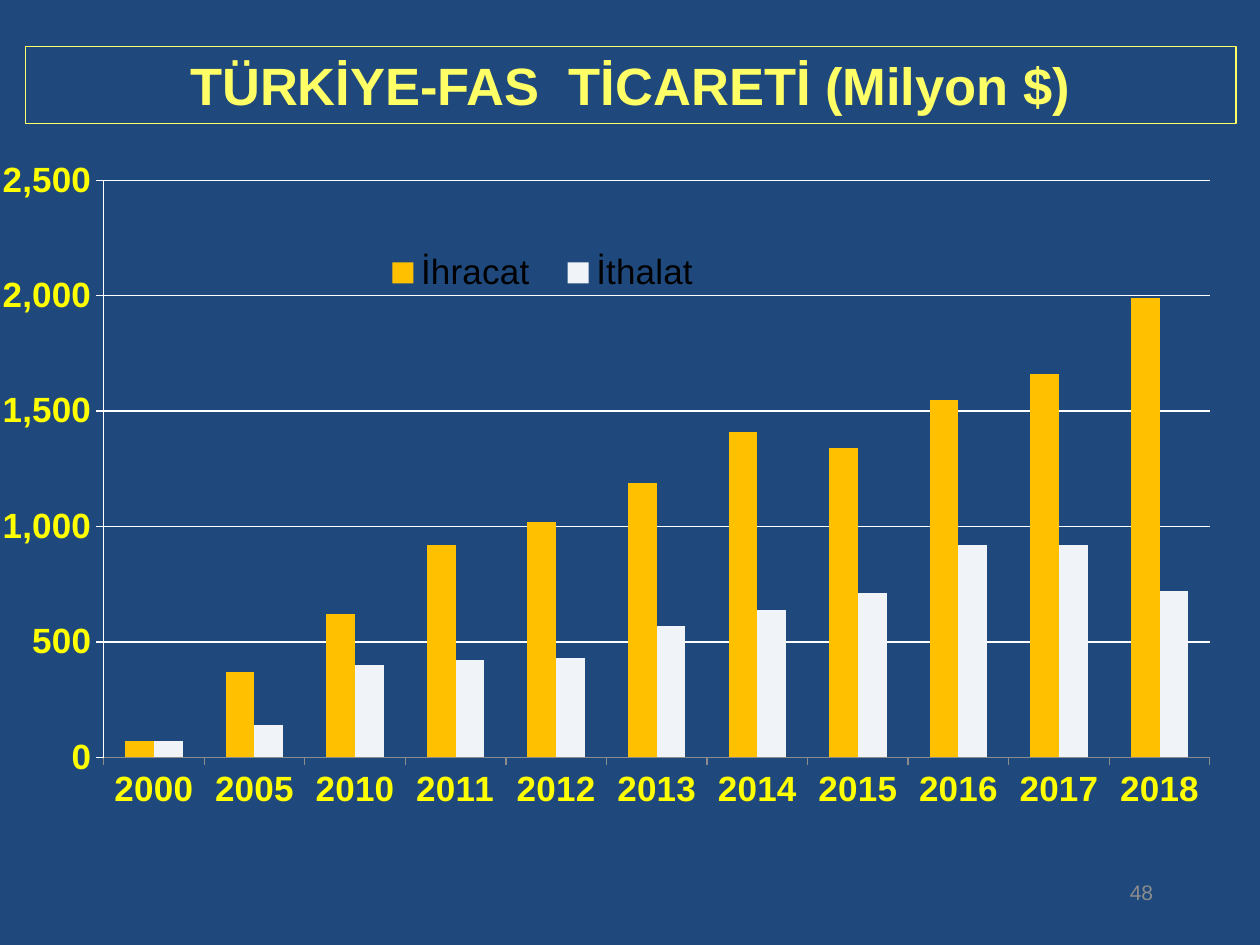
from lxml import etree
from pptx import Presentation
from pptx import util as u
from pptx.chart.data import CategoryChartData
from pptx.dml.color import RGBColor
from pptx.enum import chart as charts, shapes, text
from pptx.oxml.ns import qn

COLORS = {
    "background": "1F497D",
    "title": "FFFF66",
    "axis": "FFFF00",
    "grid": "FFFFFF",
    "axis_line": "8C8C8C",
    "legend": "000000",
    "number": "8C8C8C",
    "exports": "FFC000",
    "imports": "F0F3F8",
}
YEARS = ["2000", *map(str, range(2005, 2011, 5)), *map(str, range(2011, 2019))]
TRADE = {
    "İhracat": ("exports", [70, 370, 620, 920, 1020, 1190, 1410, 1340, 1550, 1660, 1990]),
    "İthalat": ("imports", [70, 140, 400, 420, 430, 570, 640, 710, 920, 920, 720]),
}


def color(name):
    return RGBColor.from_string(COLORS[name])


def set_font(font, size, tint, bold=False):
    font.name = "Arial"
    font.size = u.Pt(size)
    font.bold = bold
    font.color.rgb = color(tint)


def write(frame, wording, *, size, tint, bold=False, align, anchor):
    frame.word_wrap = True
    frame.vertical_anchor = anchor
    paragraph = frame.paragraphs[0]
    paragraph.alignment = align
    run = paragraph.add_run()
    run.text = wording
    set_font(run.font, size, tint, bold)


def set_line(line, tint):
    line.color.rgb = color(tint)
    line.width = u.Pt(0.75)


def place(parent, after, box, inner=False):
    for old in parent.findall(qn("c:layout")):
        parent.remove(old)
    layout = etree.Element(qn("c:layout"))
    manual = etree.SubElement(layout, qn("c:manualLayout"))
    settings = [("layoutTarget", "inner")] if inner else []
    settings += [("xMode", "edge"), ("yMode", "edge"), *zip("xywh", box)]
    for tag, value in settings:
        etree.SubElement(manual, qn(f"c:{tag}")).set("val", str(value))
    parent.insert(0 if after is None else parent.index(after) + 1, layout)


class TradeSlide:
    """Holds the style and the current slide, and adds its elements."""

    def __init__(self, deck):
        self.slide = deck.slides.add_slide(deck.slide_layouts[6])
        fill = self.slide.background.fill
        fill.solid()
        fill.fore_color.rgb = color("background")

    def title(self, wording, box):
        banner = self.slide.shapes.add_shape(
            shapes.MSO_SHAPE.RECTANGLE, *map(u.Inches, box))
        banner.shadow.inherit = False
        banner.fill.background()
        set_line(banner.line, "title")
        write(banner.text_frame, wording, size=30, tint="title", bold=True,
              align=text.PP_ALIGN.CENTER, anchor=text.MSO_ANCHOR.TOP)

    def page_number(self, wording, box):
        number = self.slide.shapes.add_textbox(*map(u.Inches, box))
        write(number.text_frame, wording, size=12, tint="number",
              align=text.PP_ALIGN.RIGHT, anchor=text.MSO_ANCHOR.MIDDLE)

    def column_chart(self, years, trade, box):
        data = CategoryChartData(number_format="#,##0")
        data.categories = years
        for name, (_, values) in trade.items():
            data.add_series(name, values)
        chart = self.slide.shapes.add_chart(
            charts.XL_CHART_TYPE.COLUMN_CLUSTERED, *map(u.Inches, box), data).chart
        chart.has_title = False
        set_font(chart.font, 18, "legend")

        columns = chart.plots[0]
        columns.gap_width = 150
        columns.overlap = 0
        columns.vary_by_categories = False
        for series, (tint, _) in zip(columns.series, trade.values()):
            series.format.fill.solid()
            series.format.fill.fore_color.rgb = color(tint)

        axes = ((chart.category_axis, "axis_line"), (chart.value_axis, "grid"))
        for axis, tint in axes:
            axis.major_tick_mark = charts.XL_TICK_MARK.OUTSIDE
            set_font(axis.tick_labels.font, 20, "axis", bold=True)
            set_line(axis.format.line, tint)
        scale = chart.value_axis
        scale.minimum_scale, scale.maximum_scale, scale.major_unit = 0, 2500, 500
        scale.tick_labels.number_format = "#,##0"
        scale.tick_labels.number_format_is_linked = False
        scale.has_major_gridlines = True
        set_line(scale.major_gridlines.format.line, "grid")

        chart.has_legend = True
        chart.legend.position = charts.XL_LEGEND_POSITION.RIGHT
        chart.legend.include_in_layout = False
        set_font(chart.legend.font, 20, "legend")
        legend = chart.element.find(".//" + qn("c:legend"))
        place(legend, legend.find(qn("c:legendPos")), (0.3, 0.14, 0.29, 0.06))
        plot_area = chart.element.find(".//" + qn("c:plotArea"))
        place(plot_area, None, (0.085, 0.047, 0.907, 0.766), inner=True)


def main():
    deck = Presentation()
    deck.slide_width, deck.slide_height = u.Inches(10), u.Inches(7.5)
    page = TradeSlide(deck)
    page.page_number("48", (7.17, 6.83, 2.08, 0.5))
    page.title("TÜRKİYE-FAS  TİCARETİ (Milyon $)", (0.2, 0.37, 9.61, 0.61))
    page.column_chart(YEARS, TRADE, (0, 1.15, 9.68, 5.98))
    deck.save("out.pptx")


if __name__ == "__main__":
    main()
